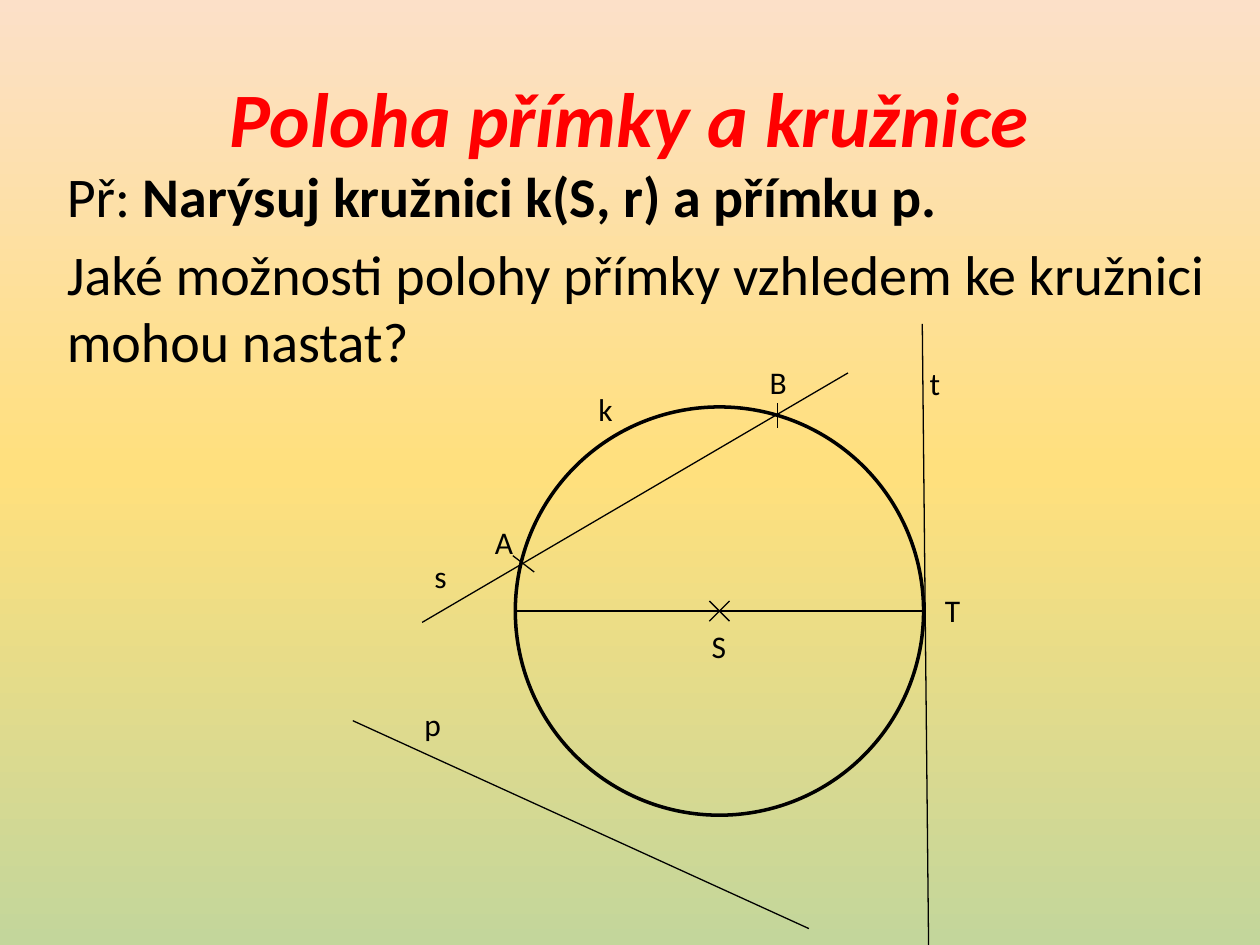
import copy

import pptx
import pptx.dml.color
import pptx.enum.shapes
import pptx.enum.text
import pptx.oxml.ns
import pptx.util
from lxml import etree
from pptx.util import Inches

COLORS = {
    "title": "FF0000",
    "ink": "000000",
    "sky": "FCE0C8",
    "sun": "FFE07D",
    "grass": "C3D69B",
}
FONT = "Calibri"


class Board:
    """Slide being drawn, together with its text and line style."""

    def __init__(self, slide):
        self.s = slide

    def color(self, name):
        return pptx.dml.color.RGBColor.from_string(COLORS[name])

    def background(self, names):
        """Vertical gradient with evenly spaced stops."""
        fill = self.s.background.fill
        fill.gradient()
        fill.gradient_angle = 270
        first = fill.gradient_stops[0]._gs
        stops = first.getparent()
        while len(stops) < len(names):
            stops.append(copy.deepcopy(first))
        for i, (stop, name) in enumerate(zip(fill.gradient_stops, names)):
            stop.color.rgb = self.color(name)
            stop.position = i / (len(names) - 1)

    def run(self, p, text, size, color="ink", bold=False, italic=False):
        r = p.add_run()
        r.text = text
        r.font.name = FONT
        r.font.size = pptx.util.Pt(size)
        r.font.bold = bold
        r.font.italic = italic
        r.font.color.rgb = self.color(color)

    def place(self, sp, left, top, width, height):
        sp.left, sp.top = Inches(left), Inches(top)
        sp.width, sp.height = Inches(width), Inches(height)

    def title(self, text, *box):
        sp = self.s.shapes.title
        self.place(sp, *box)
        p = sp.text_frame.paragraphs[0]
        p.alignment = pptx.enum.text.PP_ALIGN.CENTER
        self.run(p, text, 44, "title", bold=True, italic=True)

    def body(self, paragraphs, *box):
        """Unbulleted paragraphs, each a list of (text, bold) runs."""
        sp = self.s.placeholders[1]
        self.place(sp, *box)
        tf = sp.text_frame
        for i, runs in enumerate(paragraphs):
            p = tf.add_paragraph() if i else tf.paragraphs[0]
            pPr = p._p.get_or_add_pPr()
            pPr.set("marL", "0")
            pPr.set("indent", "0")
            etree.SubElement(pPr, pptx.oxml.ns.qn("a:buNone"))
            for text, bold in runs:
                self.run(p, text, 32, bold=bold)

    def label(self, text, left, top, width):
        sp = self.s.shapes.add_textbox(
            Inches(left), Inches(top), Inches(width), Inches(0.4))
        tf = sp.text_frame
        tf.word_wrap = False
        tf.auto_size = pptx.enum.text.MSO_AUTO_SIZE.SHAPE_TO_FIT_TEXT
        self.run(tf.paragraphs[0], text, 18)

    def line(self, x1, y1, x2, y2):
        c = self.s.shapes.add_connector(
            pptx.enum.shapes.MSO_CONNECTOR.STRAIGHT,
            Inches(x1), Inches(y1), Inches(x2), Inches(y2))
        c.line.width = pptx.util.Pt(0.75)
        c.line.color.rgb = self.color("ink")
        etree.SubElement(c._element.spPr, pptx.oxml.ns.qn("a:effectLst"))

    def circle(self, x, y, radius):
        sp = self.s.shapes.add_shape(
            pptx.enum.shapes.MSO_SHAPE.OVAL,
            Inches(x - radius), Inches(y - radius),
            Inches(2 * radius), Inches(2 * radius))
        sp.shadow.inherit = False
        sp.fill.background()
        sp.line.width = pptx.util.Pt(2)
        sp.line.color.rgb = self.color("ink")


def main():
    prs = pptx.Presentation()
    prs.slide_width, prs.slide_height = Inches(10), Inches(7.5)
    board = Board(prs.slides.add_slide(prs.slide_layouts[1]))

    board.background(["sky", "sun", "grass"])
    board.title("Poloha přímky a kružnice", 0.5, 0.3, 9, 1.25)
    board.body([
        [("Př: ", False), ("Narýsuj kružnici k(S, r) a přímku p.", True)],
        [("Jaké možnosti polohy přímky vzhledem ke kružnici mohou nastat?",
          False)],
    ], 0.43, 1.23, 9.57, 1.82)

    cx, cy, radius, arm = 5.71, 4.85, 1.62, 0.08
    board.line(cx - arm, cy - arm, cx + arm, cy + arm)
    board.line(cx + arm, cy - arm, cx - arm, cy + arm)
    board.circle(cx, cy, radius)
    board.line(cx - radius, cy, cx + radius, cy)

    secant = (6.73, 2.96, 3.35, 4.94)
    tangent = (7.32, 2.57, 7.37, 7.5)
    outer_line = (2.8, 5.72, 6.42, 7.37)
    mark_a = (4.07, 4.41, 4.24, 4.54)
    mark_b = (6.17, 3.2, 6.17, 3.4)
    for ends in (secant, tangent, outer_line, mark_a, mark_b):
        board.line(*ends)

    for text, left, top, width in [
        ("t", 7.28, 2.84, 0.29),
        ("s", 3.35, 4.37, 0.3),
        ("p", 3.27, 5.55, 0.34),
        ("S", 5.55, 4.93, 0.32),
        ("A", 3.83, 4.1, 0.35),
        ("B", 6.01, 2.83, 0.35),
        ("T", 7.4, 4.64, 0.32),
        ("k", 4.65, 3.05, 0.32),
    ]:
        board.label(text, left, top, width)

    prs.save("out.pptx")


if __name__ == "__main__":
    main()
